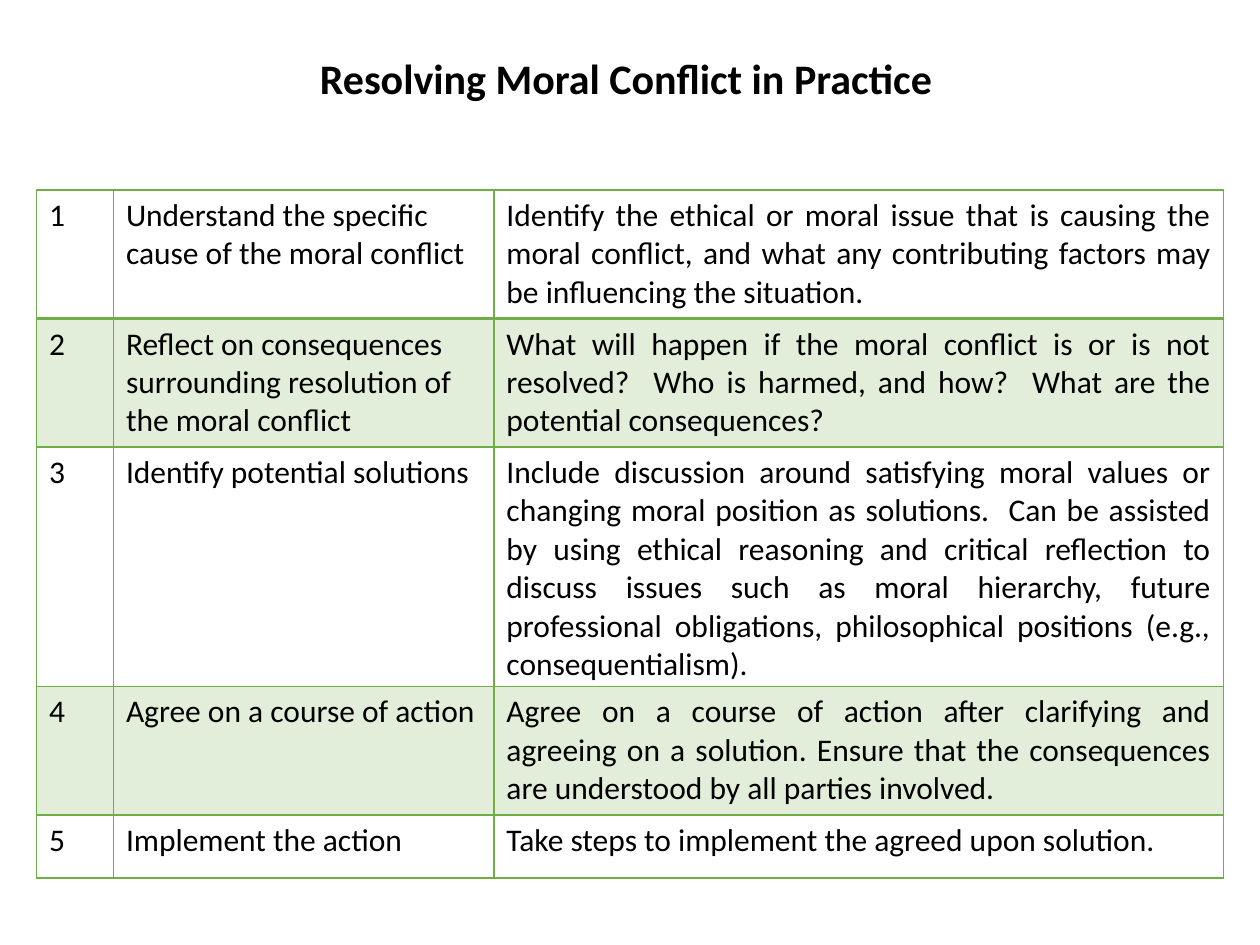
from lxml import etree
from pptx import Presentation
from pptx import util as u
from pptx.dml.color import RGBColor
from pptx.enum import text
from pptx.oxml.ns import qn

TITLE = "Resolving Moral Conflict in Practice"
STEPS = [  # (row height, step, explanation)
    (1.02, "Understand the specific cause of the moral conflict",
     "Identify the ethical or moral issue that is causing the moral conflict, "
     "and what any contributing factors may be influencing the situation."),
    (1.02, "Reflect on consequences surrounding resolution of the moral conflict",
     "What will happen if the moral conflict is or is not resolved?  "
     "Who is harmed, and how?  What are the potential consequences?"),
    (1.9, "Identify potential solutions",
     "Include discussion around satisfying moral values or changing moral "
     "position as solutions.  Can be assisted by using ethical reasoning and "
     "critical reflection to discuss issues such as moral hierarchy, future "
     "professional obligations, philosophical positions (e.g., consequentialism)."),
    (1.02, "Agree on a course of action",
     "Agree on a course of action after clarifying and agreeing on a solution. "
     "Ensure that the consequences are understood by all parties involved."),
    (0.5, "Implement the action",
     "Take steps to implement the agreed upon solution."),
]
COLUMNS = [0.61, 3.02, 5.79]
THEME = {"font": "Calibri", "ink": "000000", "green": "70AD47", "band_alpha": 20,
         "title": 24, "body": 18, "rule": 1, "first_rule": 2}


def style(p, size, bold=False):
    p.font.name = THEME["font"]
    p.font.size = u.Pt(size)
    p.font.bold = bold
    p.font.color.rgb = RGBColor.from_string(THEME["ink"])


def set_border(cell, side, width):
    """Draw one side (L, R, T or B); call before filling the cell."""
    ln = etree.SubElement(cell._tc.get_or_add_tcPr(), qn(f"a:ln{side}"),
                          w=str(u.Pt(width)))
    fill = etree.SubElement(ln, qn("a:solidFill"))
    etree.SubElement(fill, qn("a:srgbClr"), val=THEME["green"])


def fill_band(cell):
    cell.fill.solid()
    cell.fill.fore_color.rgb = RGBColor.from_string(THEME["green"])
    color = cell._tc.tcPr.find(qn("a:solidFill")).find(qn("a:srgbClr"))
    etree.SubElement(color, qn("a:alpha"), val=str(THEME["band_alpha"] * 1000))


def add_title(s):
    tf = s.shapes.add_textbox(*map(u.Inches, (2.44, 0.37, 5.11, 0.5))).text_frame
    tf.word_wrap = False
    tf.auto_size = text.MSO_AUTO_SIZE.SHAPE_TO_FIT_TEXT
    tf.text = TITLE
    style(tf.paragraphs[0], THEME["title"], bold=True)


def add_steps(s):
    height = sum(step[0] for step in STEPS)
    table = s.shapes.add_table(
        len(STEPS), len(COLUMNS),
        *map(u.Inches, (0.29, 1.51, sum(COLUMNS), height))).table
    table.first_row = table.horz_banding = False
    for column, width in zip(table.columns, COLUMNS):
        column.width = u.Inches(width)
    for i, (row_height, step, explanation) in enumerate(STEPS):
        table.rows[i].height = u.Inches(row_height)
        for j, words in enumerate((str(i + 1), step, explanation)):
            cell = table.cell(i, j)
            cell.text = words
            p = cell.text_frame.paragraphs[0]
            style(p, THEME["body"])
            if j == 2:
                p.alignment = text.PP_ALIGN.JUSTIFY
            for side in "LRTB":
                heavy = (i, side) in ((0, "B"), (1, "T"))
                set_border(cell, side, THEME["first_rule" if heavy else "rule"])
            if i % 2:
                fill_band(cell)
            else:
                cell.fill.background()


def main():
    prs = Presentation()
    prs.slide_width, prs.slide_height = u.Inches(10), u.Inches(7.5)
    s = prs.slides.add_slide(prs.slide_layouts[6])
    add_title(s)
    add_steps(s)
    prs.save("out.pptx")


if __name__ == "__main__":
    main()
